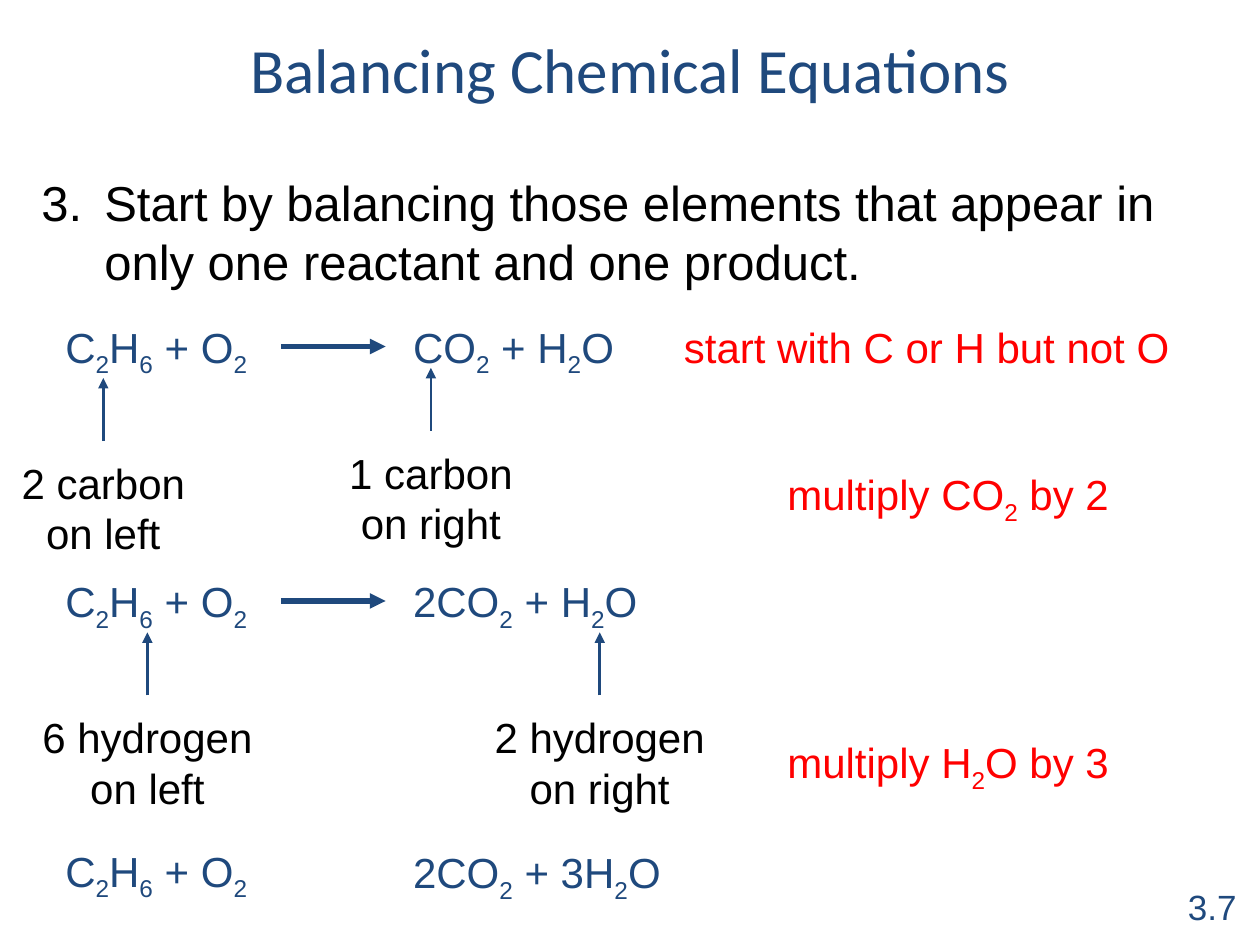
"""Build the slide on balancing carbon and hydrogen in a chemical equation."""
from lxml.etree import SubElement
from pptx import Presentation
from pptx.dml.color import RGBColor
from pptx.enum.shapes import MSO_CONNECTOR
from pptx.enum.text import MSO_ANCHOR, PP_ALIGN
from pptx.oxml.ns import qn
from pptx.util import Inches, Pt

NAVY, RED, BLACK = "1F497D", "FF0000", "000000"
LEFT, CENTER = PP_ALIGN.LEFT, PP_ALIGN.CENTER

TITLE = "Balancing Chemical Equations"
STEP_NUMBER = 3
STEP = "Start by balancing those elements that appear in only one reactant and one product."
PAGE = "3.7"

REACTANTS = "C_2H_6 + O_2"
EQUATIONS = [
    (2.5, 2.5, "CO_2 + H_2O", 1.83, True),
    (4.52, 4.52, "2CO_2 + H_2O", 2.01, True),
    (6.66, 6.67, "2CO_2 + 3H_2O", 2.2, False),
]
ATOM_COUNTS = [
    (0.82, 3.0, 1.5, "2 carbon\non left"),
    (3.42, 2.92, 1.5, "1 carbon\non right"),
    (1.17, 5.02, 1.87, "6 hydrogen\non left"),
    (4.76, 5.02, 1.87, "2 hydrogen\non right"),
]
HINTS = [
    (5.33, 2.5, 4.05, "start with C or H but not O", CENTER),
    (6.15, 3.67, 2.77, "multiply CO_2 by 2", LEFT),
    (6.15, 5.8, 2.77, "multiply H_2O by 3", LEFT),
]


def rgb(hex_color):
    return RGBColor.from_string(hex_color)


def add_formula(paragraph, formula):
    """Add runs, lowering the digit that follows each underscore."""
    first, *rest = formula.split("_")
    paragraph.add_run().text = first
    for part in rest:
        subscript = paragraph.add_run()
        subscript.text = part[0]
        subscript._r.get_or_add_rPr().set("baseline", "-25000")
        if part[1:]:
            paragraph.add_run().text = part[1:]


def add_text(slide, box, text, color, size=24, align=LEFT, font="Arial", wrap=False):
    frame = slide.shapes.add_textbox(*map(Inches, box)).text_frame
    frame.word_wrap = wrap
    for index, line in enumerate(text.split("\n")):
        paragraph = frame.add_paragraph() if index else frame.paragraphs[0]
        paragraph.alignment = align
        paragraph.font.name = font
        paragraph.font.size = Pt(size)
        paragraph.font.color.rgb = rgb(color)
        add_formula(paragraph, line)
    return frame


def add_arrow(slide, start, end, width):
    arrow = slide.shapes.add_connector(MSO_CONNECTOR.STRAIGHT, *map(Inches, start + end))
    arrow.line.color.rgb = rgb(NAVY)
    arrow.line.width = Pt(width)
    SubElement(arrow.line._get_or_add_ln(), qn("a:tailEnd"), type="triangle")
    SubElement(arrow._element.spPr, qn("a:effectLst"))


def number_paragraph(paragraph, start, indent):
    properties = paragraph._p.get_or_add_pPr()
    properties.set("marL", str(Inches(indent)))
    properties.set("indent", str(-Inches(indent)))
    numbering = properties.makeelement(
        qn("a:buAutoNum"), {"type": "arabicPeriod", "startAt": str(start)})
    properties.insert(0, numbering)


def main():
    prs = Presentation()
    prs.slide_width, prs.slide_height = Inches(10), Inches(7.5)
    slide = prs.slides.add_slide(prs.slide_layouts[6])

    title = add_text(slide, (0, 0.17, 10, 0.75), TITLE, NAVY, 36, CENTER, "Calibri", True)
    title.vertical_anchor = MSO_ANCHOR.MIDDLE
    step = add_text(slide, (0.23, 1.32, 9.35, 1.03), STEP, BLACK, 28, wrap=True)
    number_paragraph(step.paragraphs[0], STEP_NUMBER, 0.5)
    add_text(slide, (9.33, 6.98, 0.59, 0.43), PAGE, NAVY, 20)

    for left_top, right_top, products, width, has_arrow in EQUATIONS:
        add_text(slide, (0.42, left_top, 1.69, 0.5), REACTANTS, NAVY)
        add_text(slide, (3.18, right_top, width, 0.5), products, NAVY)
        if has_arrow:
            middle = left_top + 0.25
            add_arrow(slide, (2.23, middle), (3.06, middle), 3)

    for center, top, width, count in ATOM_COUNTS:
        add_arrow(slide, (center, top + 0.5), (center, top), 1.5)
        add_text(slide, (center - width / 2, top + 0.58, width, 0.9), count, BLACK, align=CENTER)

    for left, top, width, hint, align in HINTS:
        add_text(slide, (left, top, width, 0.5), hint, RED, align=align)

    prs.save("out.pptx")


if __name__ == "__main__":
    main()
